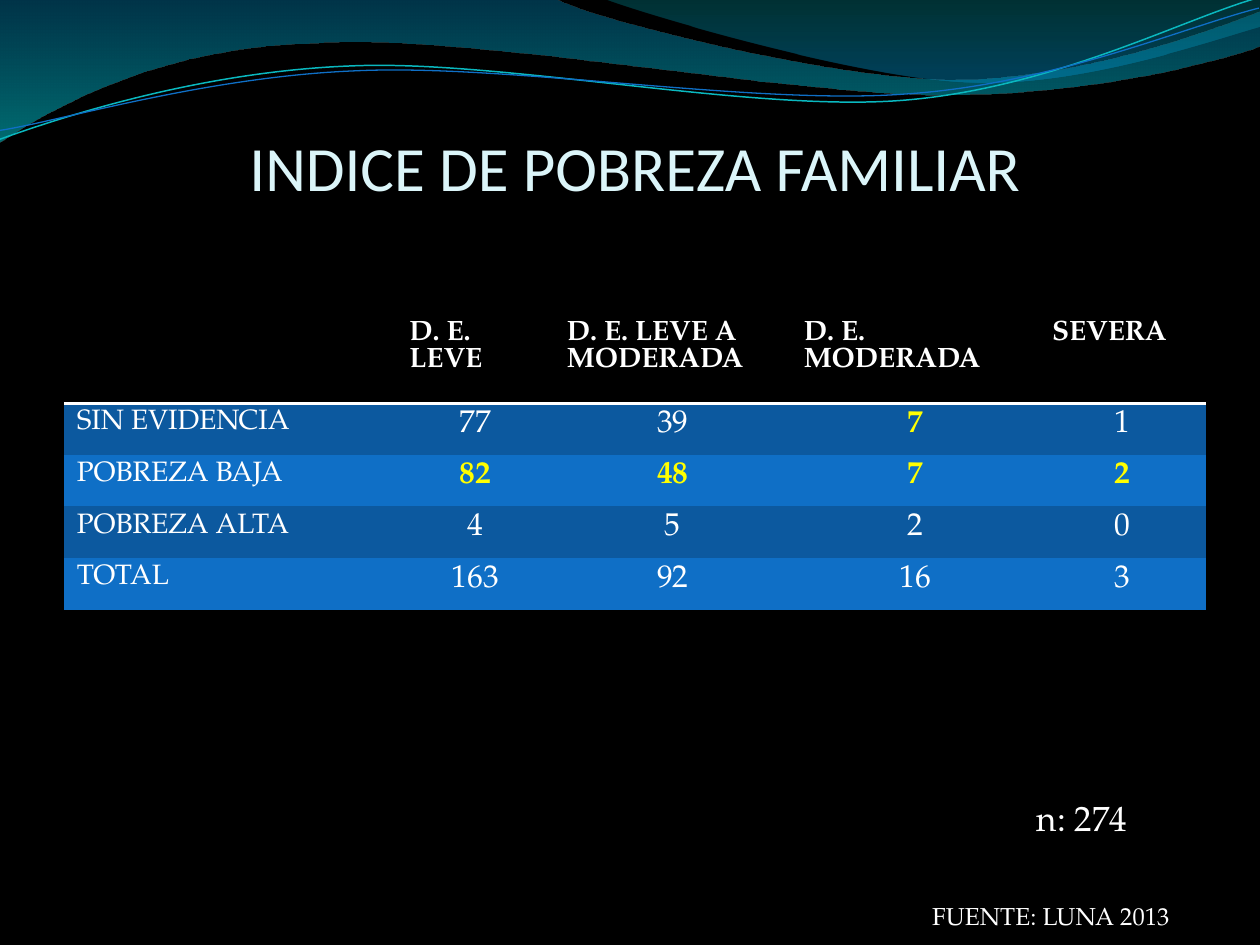
from lxml.etree import SubElement
from pptx import Presentation
from pptx.dml.color import RGBColor
from pptx.enum.text import MSO_ANCHOR, PP_ALIGN
from pptx.oxml.ns import qn
from pptx.util import Inches, Pt

COLORS = {
    "black": "000000", "white": "FFFFFF", "yellow": "FFFF00", "title": "DBF5F9",
    "dark_row": "0C599F", "light_row": "0F6FC6", "aqua": "0AB8BF", "blue": "0F6FC6",
    "wave_blue": "0074A1", "wave_cyan": "00C6CF", "crest_teal": "00A1A9", "crest_blue": "008BBF",
}
SERIF = "TeX Gyre Pagella"
NO_STYLE = "{2D5ABB26-0587-4C30-8999-92F81FD0307C}"
CURVE_TILT = 357.3

HEADERS = ["", "D. E. LEVE", "D. E. LEVE A MODERADA", "D. E. MODERADA", "SEVERA"]
ROWS = [
    ["SIN EVIDENCIA", "77", "39", "7", "1"],
    ["POBREZA BAJA", "82", "48", "7", "2"],
    ["POBREZA ALTA", "4", "5", "2", "0"],
    ["TOTAL", "163", "92", "16", "3"],
]
HIGHLIGHTS = {(1, 3), (2, 1), (2, 2), (2, 3), (2, 4)}
COLUMN_WIDTHS = [2.64, 1.25, 1.88, 1.97, 1.32]
ROW_HEIGHTS = [0.71] + [0.41] * 4

# An outline is a list of points (two numbers) and Bézier curves (six numbers).
WAVE = [
    (0, 0), (4.4, -0.01), (4.76, 0.17, 6.64, 0.63, 7.58, 0.63),
    (8.53, 0.63, 9.58, 0.26, 10, 0.09), (10.01, 0.36),
    (9.83, 0.44, 8.7, 0.76, 7.46, 0.75), (6.22, 0.75, 3.82, 0.28, 2.57, 0.34),
    (1.29, 0.36, 0.46, 0.83, -0.01, 1.13), (0, 0),
]
CREST = [
    (4.79, -0.01), (5.09, 0.11, 6.82, 0.62, 7.69, 0.65),
    (8.56, 0.69, 9.61, 0.32, 10, 0.21), (10, 0), (4.79, -0.01),
]
AQUA_LINE = [
    (-0.02, 0.87), (0.47, 0.72, 1.58, 0.41, 2.78, 0.42),
    (3.96, 0.42, 5.91, 0.93, 7.12, 0.9), (8.32, 0.87, 9.4, 0.36, 10, 0.22),
]
BLUE_LINE = [
    (-0.02, 0.8), (0.46, 0.75, 1.64, 0.45, 2.83, 0.46),
    (4.03, 0.46, 5.96, 0.88, 7.16, 0.85), (8.35, 0.83, 9.42, 0.42, 10.01, 0.3),
]


def color(name):
    return RGBColor.from_string(COLORS[name])


def add_outline(page, outline, close):
    """Draw all points as straight lines, then join each curve's three points."""
    start, *segments = outline
    numbers = [number for segment in segments for number in segment]
    points = [(Inches(x), Inches(y)) for x, y in zip(numbers[::2], numbers[1::2])]
    builder = page.shapes.build_freeform(Inches(start[0]), Inches(start[1]))
    builder.add_line_segments(points, close=close)
    shape = builder.convert_to_shape()
    shape.shadow.inherit = False
    lines = iter(list(shape._element.iter(qn("a:lnTo"))))
    for segment in segments:
        first = next(lines)
        if len(segment) == 6:
            first.tag = qn("a:cubicBezTo")
            for line in (next(lines), next(lines)):
                first.append(line[0])
                line.getparent().remove(line)
    return shape


def add_wave(page, outline, stops):
    """Add a wave with a downward gradient; stops are (position, colour, opacity %)."""
    shape = add_outline(page, outline, True)
    shape.line.fill.background()
    shape.fill.gradient()
    shape.fill.gradient_angle = 270
    for stop, (position, name, _) in zip(shape.fill.gradient_stops, stops):
        stop.position = position
        stop.color.rgb = color(name)
    tints = shape._element.spPr.find(qn("a:gradFill")).iter(qn("a:srgbClr"))
    for tint, (_, _, opacity) in zip(tints, stops):
        SubElement(tint, qn("a:alpha"), val=str(opacity * 1000))


def add_curve(page, outline, name, width):
    shape = add_outline(page, outline, False)
    shape.rotation = CURVE_TILT
    shape.fill.background()
    shape.line.color.rgb = color(name)
    shape.line.width = Pt(width)


def write(frame, text, size, name="white", font=SERIF, bold=False, align=PP_ALIGN.LEFT):
    para = frame.paragraphs[0]
    para.alignment = align
    span = para.add_run()
    span.text = text
    span.font.size = Pt(size)
    span.font.name = font
    span.font.bold = bold
    span.font.color.rgb = color(name)


def add_text(page, left, top, width, height, text, size, **style):
    box = page.shapes.add_textbox(Inches(left), Inches(top), Inches(width), Inches(height))
    box.text_frame.word_wrap = True
    write(box.text_frame, text, size, **style)
    return box.text_frame


def add_title(page, text):
    frame = add_text(page, 0.5, 0.77, 9.08, 0.85, text, 36,
                     name="title", font="Calibri", align=PP_ALIGN.CENTER)
    frame.vertical_anchor = MSO_ANCHOR.BOTTOM
    frame.margin_left = frame.margin_right = frame.margin_bottom = 0


def add_bottom_border(cell, name, width):
    properties = cell._tc.get_or_add_tcPr()
    border = properties.makeelement(qn("a:lnB"), {"w": str(Pt(width))})
    fill = SubElement(border, qn("a:solidFill"))
    SubElement(fill, qn("a:srgbClr"), val=COLORS[name])
    properties.insert(0, border)


def fill_cell(cell, text, row, column):
    header = row == 0
    cell.fill.solid()
    cell.fill.fore_color.rgb = color("black" if header else
                                     "dark_row" if row % 2 else "light_row")
    if header:
        add_bottom_border(cell, "white", 2)
    if text:
        value = not header and column > 0
        highlight = (row, column) in HIGHLIGHTS
        write(cell.text_frame, text, 18 if value else 16,
              name="yellow" if highlight else "white", bold=header or highlight,
              align=PP_ALIGN.CENTER if value else PP_ALIGN.LEFT)


def add_poverty_table(page):
    table = page.shapes.add_table(
        len(ROW_HEIGHTS), len(COLUMN_WIDTHS), Inches(0.51), Inches(2.49),
        Inches(sum(COLUMN_WIDTHS)), Inches(sum(ROW_HEIGHTS))).table
    table._tbl.tblPr.find(qn("a:tableStyleId")).text = NO_STYLE
    for column, width in zip(table.columns, COLUMN_WIDTHS):
        column.width = Inches(width)
    for row, height in zip(table.rows, ROW_HEIGHTS):
        row.height = Inches(height)
    for row, texts in enumerate([HEADERS] + ROWS):
        for column, text in enumerate(texts):
            fill_cell(table.cell(row, column), text, row, column)


def main():
    deck = Presentation()
    deck.slide_width, deck.slide_height = Inches(10), Inches(7.5)
    page = deck.slides.add_slide(deck.slide_layouts[6])
    page.background.fill.solid()
    page.background.fill.fore_color.rgb = color("black")

    add_wave(page, WAVE, [(0, "wave_blue", 45), (1, "wave_cyan", 55)])
    add_wave(page, CREST, [(0, "crest_teal", 30), (0.8, "crest_blue", 45)])
    add_curve(page, AQUA_LINE, "aqua", 0.85)
    add_curve(page, BLUE_LINE, "blue", 0.75)
    add_title(page, "INDICE DE POBREZA FAMILIAR")
    add_poverty_table(page)
    add_text(page, 8.13, 6.27, 1.26, 0.44, "n: 274", 20)
    add_text(page, 7.3, 7.1, 2.43, 0.34, "FUENTE: LUNA 2013", 14)
    deck.save("out.pptx")


if __name__ == "__main__":
    main()
